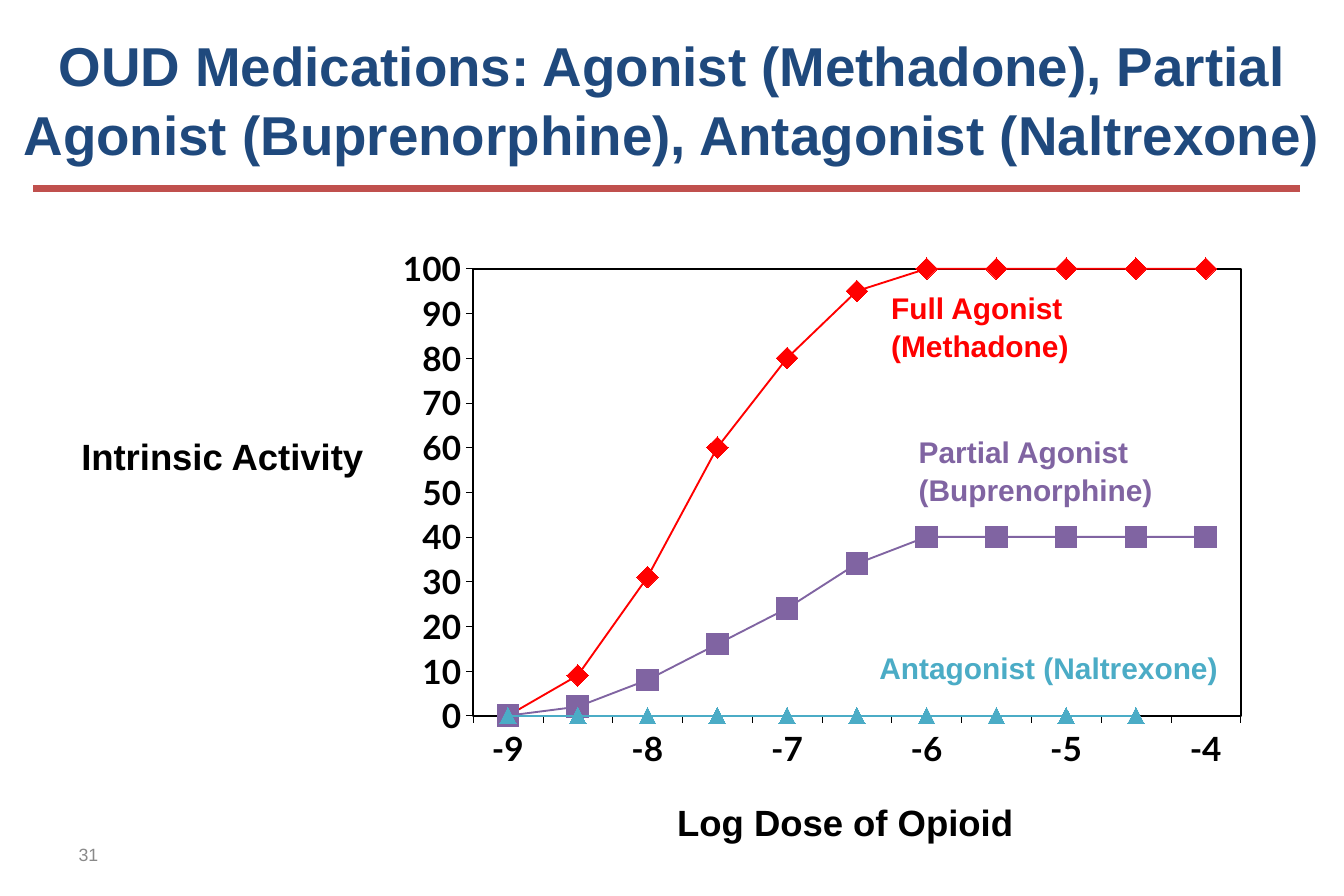
from dataclasses import dataclass

from lxml.etree import SubElement
from pptx import Presentation
from pptx.chart.chart import Chart
from pptx.chart.data import CategoryChartData as Data
from pptx.dml.color import RGBColor as RGB
from pptx.enum.chart import XL_CHART_TYPE as Kind, XL_MARKER_STYLE as Mark, XL_TICK_MARK as Tick
from pptx.enum.shapes import MSO_CONNECTOR as Link
from pptx.enum.text import MSO_ANCHOR as Anchor, PP_ALIGN as Align
from pptx.oxml import parse_xml
from pptx.oxml.ns import nsdecls, qn
from pptx.slide import Slide
from pptx.util import Pt


@dataclass(frozen=True)
class Theme:
    face: str = "Arial"
    chart: str = "Lato"
    black: str = "000000"
    navy: str = "1F497D"
    rule: str = "C0504D"
    grey: str = "898989"
    red: str = "FF0000"
    purple: str = "8064A2"
    teal: str = "4BACC6"
    title: float = 33
    axis: float = 22
    label: float = 18
    tick: float = 20.1
    page: float = 10.7
    lead: float = 1.05


@dataclass(frozen=True)
class Note:
    lines: tuple[str, ...]
    box: tuple[float, float, float, float]
    size: float
    color: str
    bold: bool = True
    wrap: bool = False
    pad: tuple[float, float] = (0, 0)
    align: Align = Align.LEFT
    anchor: Anchor = Anchor.TOP


@dataclass(frozen=True)
class Curve:
    name: str
    vals: tuple[float | None, ...]
    color: str
    mark: Mark
    size: int


T = Theme()

NOTES = (
    Note(("Intrinsic Activity",), (49, 260.6, 172, 26.6), T.axis, T.black),
    Note(("OUD Medications: Agonist (Methadone), Partial Agonist (Buprenorphine), "
          "Antagonist (Naltrexone)",), (0, 13.7, 810, 87), T.title, T.navy,
         wrap=True, pad=(7.2, 3.6), align=Align.CENTER),
    Note(("Log Dose of Opioid",), (408.2, 481, 205, 26.6), T.axis, T.black),
    Note(("Full Agonist", "(Methadone)"), (537.1, 173.5, 108, 44), T.label, T.red),
    Note(("Partial Agonist", "(Buprenorphine)"), (553.7, 260.6, 142.6, 44), T.label, T.purple),
    Note(("Antagonist (Naltrexone)",), (530, 390.2, 206, 21.6), T.label, T.teal),
    Note(("31",), (40.3, 500.4, 188.6, 28.8), T.page, T.grey, bold=False,
         wrap=True, pad=(7.2, 3.6), anchor=Anchor.MIDDLE),
)

CURVES = (
    Curve("Full Agonist", (0, 9, 31, 60, 80, 95) + (100,) * 5, T.red, Mark.DIAMOND, 13),
    Curve("Partial Agonist", (0, 2, 8, 16, 24, 34) + (40,) * 5, T.purple, Mark.SQUARE, 13),
    Curve("Antagonist", (0,) * 10 + (None,), T.teal, Mark.TRIANGLE, 10),
)
DOSES = [str(n // 2) if n % 2 == 0 else "" for n in range(-18, -7)]
PLOT = {"x": 0.127, "y": 0.074, "w": 0.859, "h": 0.77}


def write(slide: Slide, note: Note) -> None:
    """Add a text box, run by run."""
    frame = slide.shapes.add_textbox(*map(Pt, note.box)).text_frame
    frame.word_wrap = note.wrap
    frame.vertical_anchor = note.anchor
    frame.margin_left = frame.margin_right = Pt(note.pad[0])
    frame.margin_top = frame.margin_bottom = Pt(note.pad[1])
    for i, line in enumerate(note.lines):
        para = frame.add_paragraph() if i else frame.paragraphs[0]
        para.alignment = note.align
        para.line_spacing = T.lead
        run = para.add_run()
        run.text = line
        font = run.font
        font.name, font.size, font.bold = T.face, Pt(note.size), note.bold
        font.color.rgb = RGB.from_string(note.color)


def frame_plot(chart: Chart) -> None:
    """Place the inner plot area and outline it."""
    area = chart._chartSpace.find(".//" + qn("c:plotArea"))
    for old in area.findall(qn("c:layout")):
        area.remove(old)
    spots = "".join(f'<c:{k}Mode val="edge"/>' for k in "xy")
    spots += "".join(f'<c:{k} val="{v}"/>' for k, v in PLOT.items())
    area.insert(0, parse_xml(
        f'<c:layout {nsdecls("c")}><c:manualLayout><c:layoutTarget val="inner"/>'
        f'{spots}</c:manualLayout></c:layout>'))
    area.append(parse_xml(
        f'<c:spPr {nsdecls("c", "a")}><a:noFill/><a:ln w="{Pt(1.12)}"><a:solidFill>'
        f'<a:srgbClr val="{T.black}"/></a:solidFill></a:ln></c:spPr>'))


def plot(slide: Slide) -> None:
    """Draw the dose and activity chart."""
    data = Data()
    data.categories = DOSES
    for curve in CURVES:
        data.add_series(curve.name, curve.vals)
    box = map(Pt, (216.7, 136.1, 538.6, 349.9))
    chart = slide.shapes.add_chart(Kind.LINE_MARKERS, *box, data).chart
    chart.has_legend = chart.has_title = False
    chart.plots[0].vary_by_categories = False
    black = RGB.from_string(T.black)
    font = chart.font
    font.name, font.size, font.bold = T.chart, Pt(T.tick), True
    font.color.rgb = black
    for axis in (chart.category_axis, chart.value_axis):
        axis.has_major_gridlines = False
        axis.major_tick_mark, axis.minor_tick_mark = Tick.OUTSIDE, Tick.NONE
        axis.format.line.color.rgb = black
        axis.format.line.width = Pt(0.28)
    axis = chart.value_axis
    axis.minimum_scale, axis.maximum_scale, axis.major_unit = 0, 100, 10
    for curve, line in zip(CURVES, chart.plots[0].series):
        color = RGB.from_string(curve.color)
        line.smooth = False
        line.format.line.color.rgb = color
        line.format.line.width = Pt(1.12)
        mark = line.marker
        mark.style, mark.size = curve.mark, curve.size
        mark.format.fill.solid()
        mark.format.fill.fore_color.rgb = color
        mark.format.line.color.rgb = color
    frame_plot(chart)


def rule(slide: Slide) -> None:
    """Draw the line under the title."""
    line = slide.shapes.add_connector(Link.STRAIGHT, *map(Pt, (20.2, 113.8, 783.4, 113.8)))
    line.line.color.rgb = RGB.from_string(T.rule)
    line.line.width = Pt(4)
    SubElement(line._element.spPr, qn("a:effectLst"))


def main() -> None:
    """Build and save the slide."""
    deck = Presentation()
    deck.slide_width, deck.slide_height = Pt(810), Pt(540)
    slide = deck.slides.add_slide(deck.slide_layouts[6])
    plot(slide)
    rule(slide)
    for note in NOTES:
        write(slide, note)
    deck.save("out.pptx")


if __name__ == "__main__":
    main()
